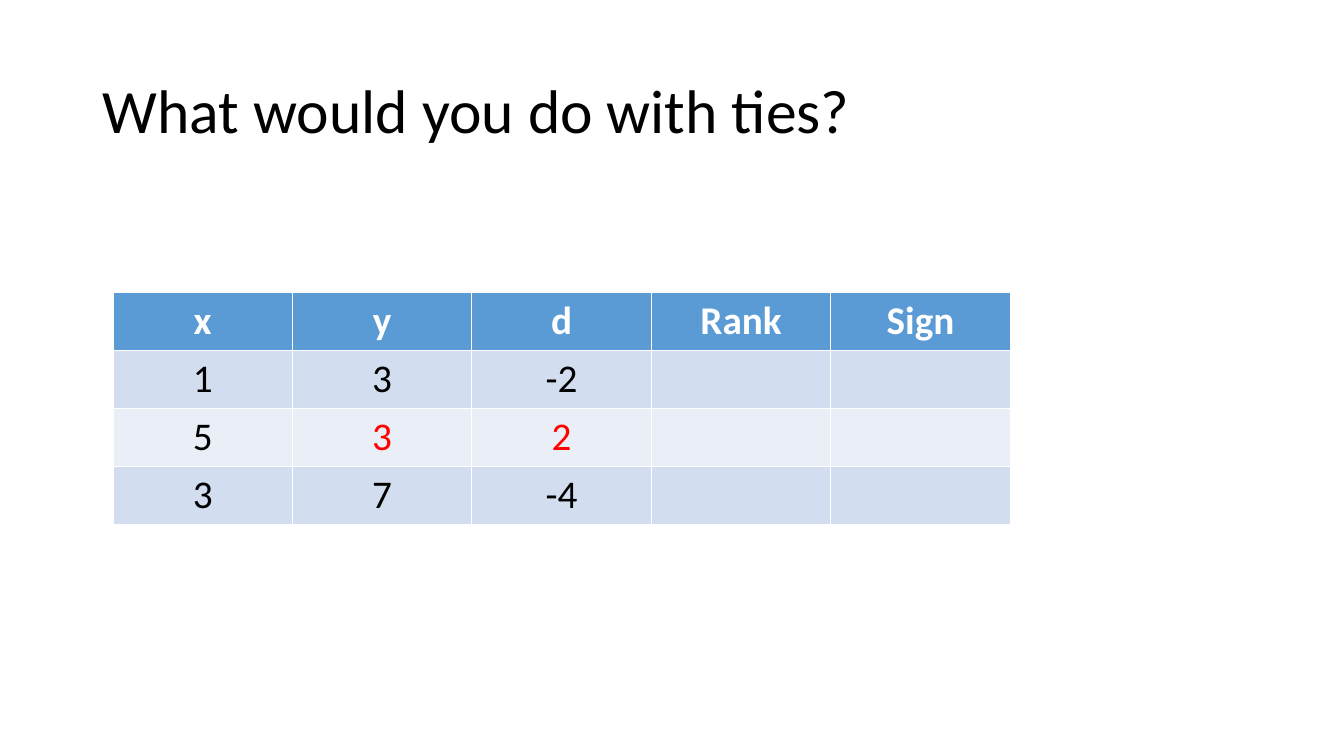
from pptx import Presentation
from pptx.dml.color import RGBColor
from pptx.enum.text import MSO_ANCHOR, MSO_AUTO_SIZE, PP_ALIGN
from pptx.util import Pt

PX = 9144
LEFT = PP_ALIGN.LEFT
CENTER = PP_ALIGN.CENTER
MIDDLE = MSO_ANCHOR.MIDDLE
FIXED = MSO_AUTO_SIZE.NONE

BLACK = RGBColor(0x00, 0x00, 0x00)
WHITE = RGBColor(0xFF, 0xFF, 0xFF)
RED = RGBColor(0xFF, 0x00, 0x00)
BLUE = RGBColor(0x5B, 0x9B, 0xD5)
DARK = RGBColor(0xD2, 0xDE, 0xEF)
PALE = RGBColor(0xEA, 0xEF, 0xF7)

ROWS = [
    ["x", "y", "d", "Rank", "Sign"],
    ["1", "3", "-2", "", ""],
    ["5", "3", "2", "", ""],
    ["3", "7", "-4", "", ""],
]
FILLS = [BLUE, DARK, PALE, DARK]
TIES = {(2, 1), (2, 2)}


def add_run(para, text, size, color, bold=False):
    run = para.add_run()
    run.text = text
    font = run.font
    font.name = "Calibri"
    font.size = Pt(size)
    font.bold = bold
    font.color.rgb = color


deck = Presentation()
deck.slide_width = 1333 * PX
deck.slide_height = 750 * PX
slide = deck.slides.add_slide(deck.slide_layouts[5])

title = slide.shapes.title
title.left, title.top = 92 * PX, 40 * PX
title.width, title.height = 1150 * PX, 145 * PX
frame = title.text_frame
frame.word_wrap = True
frame.auto_size = FIXED
frame.vertical_anchor = MIDDLE
para = frame.paragraphs[0]
para.alignment = LEFT
para.line_spacing = 0.9
add_run(para, "What would you do with ties?", 44, BLACK)

table = slide.shapes.add_table(
    len(ROWS), len(ROWS[0]), 112 * PX, 290 * PX, 890 * PX, 228 * PX
).table
for r, row in enumerate(ROWS):
    for c, text in enumerate(row):
        cell = table.cell(r, c)
        cell.fill.solid()
        cell.fill.fore_color.rgb = FILLS[r]
        para = cell.text_frame.paragraphs[0]
        para.alignment = CENTER
        if text:
            color = WHITE if r == 0 else RED if (r, c) in TIES else BLACK
            add_run(para, text, 28, color, r == 0)

deck.save("out.pptx")
